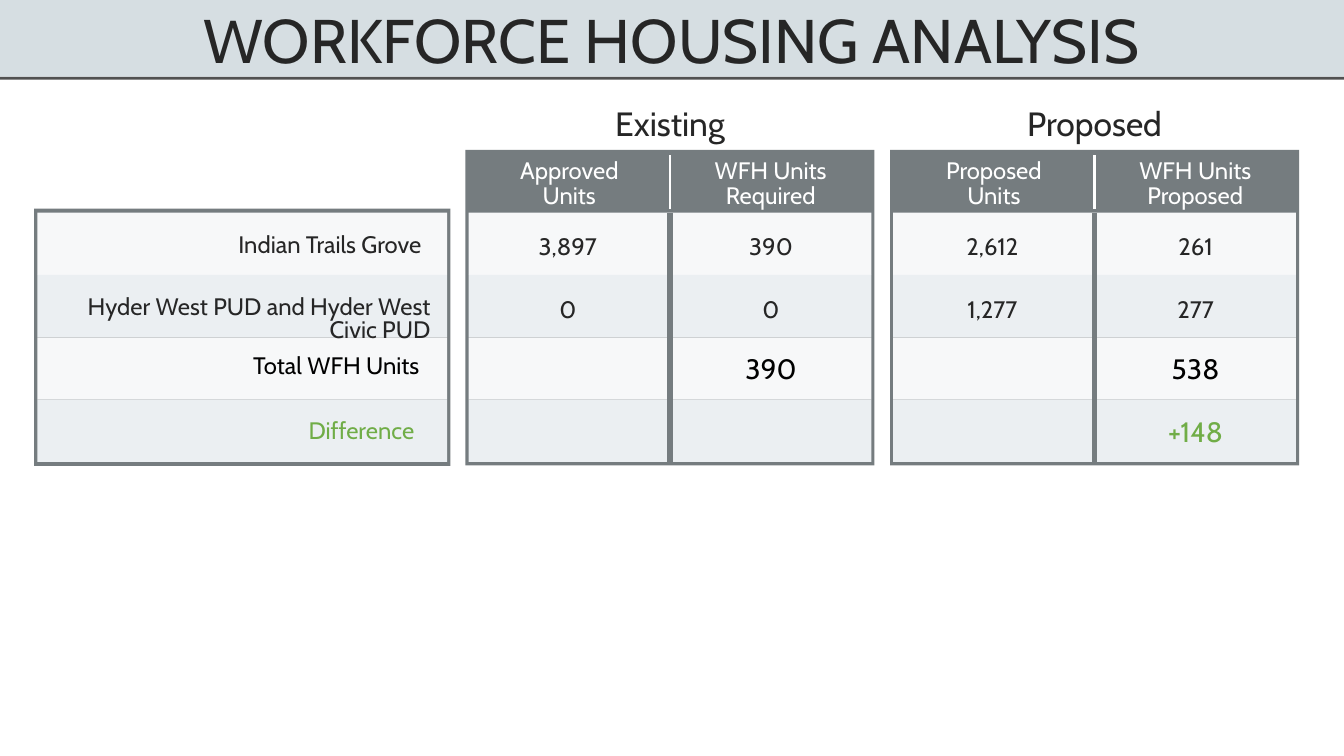
from dataclasses import dataclass

from lxml.etree import SubElement
from pptx import Presentation
from pptx.dml.color import RGBColor
from pptx.enum.shapes import MSO_CONNECTOR, MSO_SHAPE
from pptx.enum.text import MSO_ANCHOR, PP_ALIGN
from pptx.oxml.ns import qn
from pptx.util import Cm, Pt


@dataclass(frozen=True)
class Theme:
    font: str = "Cabin"
    ink: str = "262626"
    black: str = "000000"
    white: str = "FFFFFF"
    green: str = "70AD47"
    band: str = "D6DEE2"
    frame: str = "757C7F"
    stripes: tuple = ("F7F8F9", "EBEFF2")
    title: int = 44
    head: int = 24
    total: int = 20
    body: int = 17


THEME = Theme()

# Grid, in centimetres
WIDE, HIGH = 33.87, 19.05
TOP, STEP, ROWS = 5.36, 1.57, 4
EDGE = 0.08
PANEL = 10.31

# Label, right edge and top of its box, colour, value size
LABELS = [
    ("Indian Trails Grove", 10.87, 5.79, THEME.ink, THEME.body),
    ("Hyder West PUD and Hyder West Civic PUD", 11.1, 7.37, THEME.ink, THEME.body),
    ("Total WFH Units", 10.82, 8.86, THEME.black, THEME.total),
    ("Difference", 10.69, 10.49, THEME.green, THEME.total),
]

# Name, left edge, column heads, values by row
PANELS = [
    ("Existing", 11.73, ("Approved\nUnits", "WFH Units\nRequired"),
     [("3,897", "390"), ("0", "0"), ("", "390"), ("", "")]),
    ("Proposed", 22.43, ("Proposed\nUnits", "WFH Units\nProposed"),
     [("2,612", "261"), ("1,277", "277"), ("", "538"), ("", "+148")]),
]


def add_text(slide, text, left, top, width, height, *, size=THEME.body,
             color=THEME.ink, align=PP_ALIGN.CENTER, lead=18):
    box = slide.shapes.add_textbox(Cm(left), Cm(top), Cm(width), Cm(height))
    frame = box.text_frame
    frame.word_wrap = True
    frame.vertical_anchor = MSO_ANCHOR.TOP
    frame.text = text
    for para in frame.paragraphs:
        para.alignment = align
        para.line_spacing = Pt(lead)
        para.font.name = THEME.font
        para.font.size = Pt(size)
        para.font.color.rgb = RGBColor.from_string(color)


def add_rect(slide, left, top, width, height, color, alpha=None):
    rect = slide.shapes.add_shape(
        MSO_SHAPE.RECTANGLE, Cm(left), Cm(top), Cm(width), Cm(height))
    rect.shadow.inherit = False
    rect.line.fill.background()
    rect.fill.solid()
    rect.fill.fore_color.rgb = RGBColor.from_string(color)
    if alpha is not None:
        tint = rect.fill._xPr.find(qn("a:solidFill"))[0]
        SubElement(tint, qn("a:alpha")).set("val", str(alpha * 1000))


def add_rule(slide, left, top, end, color, weight):
    rule = slide.shapes.add_connector(
        MSO_CONNECTOR.STRAIGHT, Cm(left), Cm(top), Cm(left), Cm(end))
    rule.line.color.rgb = RGBColor.from_string(color)
    rule.line.width = Pt(weight)
    SubElement(rule._element.spPr, qn("a:effectLst"))


def add_frame(slide, left, top, width, height):
    """Grey panel with striped rows inside its edge."""
    add_rect(slide, left, top, width, height, THEME.frame)
    for row in range(ROWS):
        add_rect(slide, left + EDGE, TOP + row * STEP, width - 2 * EDGE, STEP,
                 THEME.stripes[row % 2])


def add_title(slide):
    add_rect(slide, 0, 1.93, WIDE, 0.08, THEME.ink, alpha=80)
    add_rect(slide, 0, 0, WIDE, 1.93, THEME.band)
    add_text(slide, "WORKFORCE HOUSING ANALYSIS", 0, 0.38, WIDE, 1.68,
             size=THEME.title, lead=40)


def add_labels(slide):
    add_frame(slide, 0.86, 5.26, 10.49, 6.48)
    for text, right, top, color, _ in LABELS:
        add_text(slide, text, right - 10.16, top, 10.16, 0.86, color=color,
                 align=PP_ALIGN.RIGHT, lead=16.5)


def add_panel(slide, name, left, heads, rows):
    add_frame(slide, left, 3.78, PANEL, 7.95)
    add_text(slide, name, left, 2.9, PANEL, 0.91, size=THEME.head, lead=16.5)

    # Column heads and dividers
    half = PANEL / 2 - EDGE
    for col, head in enumerate(heads):
        add_text(slide, head, left + EDGE + col * half, 3.89, half, 1.55,
                 color=THEME.white)
    mid = left + PANEL / 2
    add_rule(slide, mid, TOP, TOP + ROWS * STEP, THEME.frame, 4)
    add_rule(slide, mid, 3.91, 5.26, THEME.white, 2)

    # Values
    for row, (cells, label) in enumerate(zip(rows, LABELS)):
        color, size = label[-2:]
        for col, cell in enumerate(cells):
            if cell:
                add_text(slide, cell, left + EDGE + col * 5.12,
                         TOP + 0.45 + row * STEP, 5, 0.89,
                         size=size, color=color)


def main():
    deck = Presentation()
    deck.slide_width, deck.slide_height = Cm(WIDE), Cm(HIGH)
    slide = deck.slides.add_slide(deck.slide_layouts[6])
    add_title(slide)
    add_labels(slide)
    for panel in PANELS:
        add_panel(slide, *panel)
    deck.save("out.pptx")


if __name__ == "__main__":
    main()
